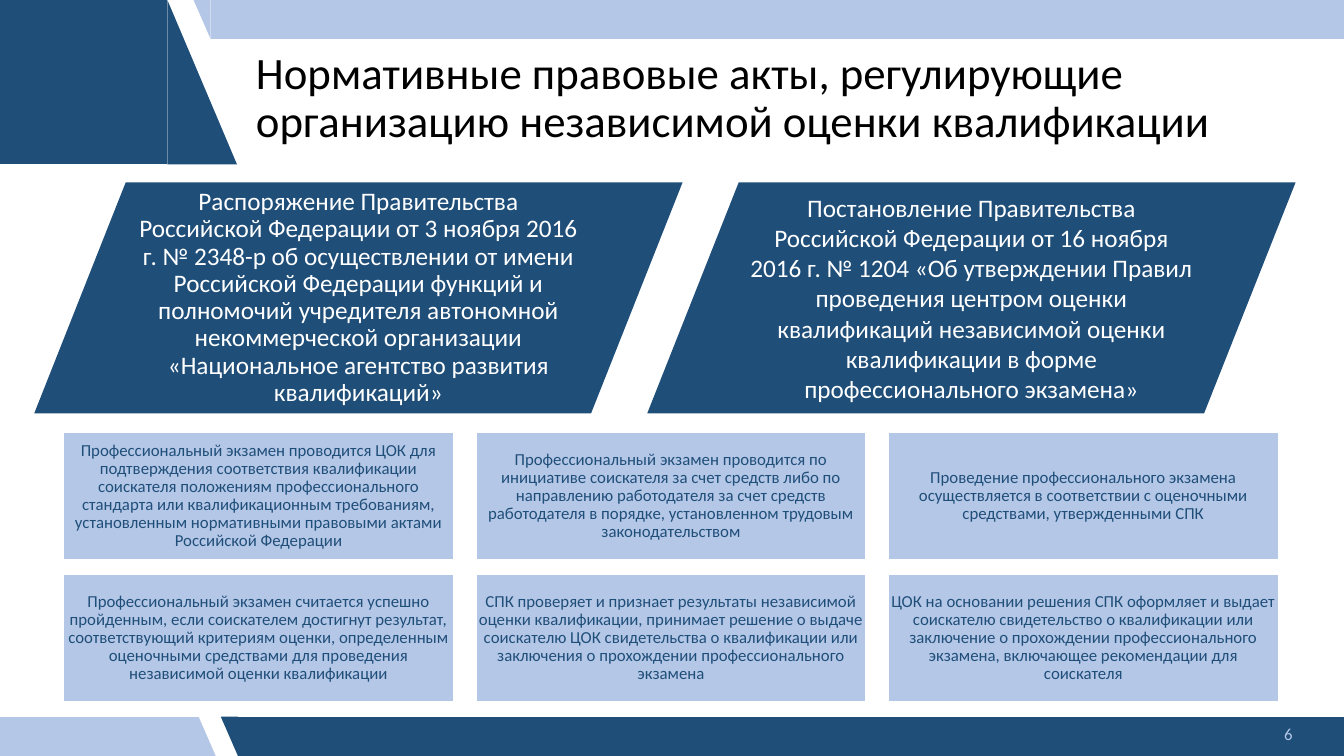
from dataclasses import dataclass
from itertools import product

from pptx import Presentation
from pptx.dml.color import RGBColor
from pptx.enum.shapes import MSO_SHAPE
from pptx.enum.text import MSO_ANCHOR, PP_ALIGN
from pptx.shapes.autoshape import Shape
from pptx.slide import Slide
from pptx.util import Inches, Pt


@dataclass(frozen=True)
class Theme:
    font: str = "Calibri"
    dark: RGBColor = RGBColor(0x1F, 0x4E, 0x79)
    light: RGBColor = RGBColor(0xB4, 0xC7, 0xE7)
    white: RGBColor = RGBColor(0xFF, 0xFF, 0xFF)
    black: RGBColor = RGBColor(0, 0, 0)
    title_size: int = 32
    act_size: int = 18
    card_size: int = 12


@dataclass(frozen=True)
class Box:
    left: float
    top: float
    width: float
    height: float

    def lengths(self) -> list[int]:
        return [Inches(value) for value in (self.left, self.top, self.width, self.height)]


@dataclass(frozen=True)
class Decoration:
    kind: MSO_SHAPE
    box: Box
    color: RGBColor
    rotation: int = 0


@dataclass(frozen=True)
class TextStyle:
    size: int
    color: RGBColor
    alignment: PP_ALIGN = PP_ALIGN.CENTER
    line_spacing: float = 1.0
    side_inset: float = 0.1
    edge_inset: float = 0.05


@dataclass(frozen=True)
class Act:
    text: str
    left: float
    line_spacing: float


THEME = Theme()
BAR, CORNER = MSO_SHAPE.FLOWCHART_PROCESS, MSO_SHAPE.RIGHT_TRIANGLE
BAR_HEIGHT, FOOTER_TOP = 0.39, 7.11

DECORATIONS = [
    Decoration(BAR, Box(2.36, FOOTER_TOP, 10.97, BAR_HEIGHT), THEME.dark),
    Decoration(CORNER, Box(2.19, FOOTER_TOP, 0.17, BAR_HEIGHT), THEME.dark, 180),
    Decoration(BAR, Box(0, FOOTER_TOP, 1.97, BAR_HEIGHT), THEME.light),
    Decoration(CORNER, Box(1.97, FOOTER_TOP, 0.17, BAR_HEIGHT), THEME.light),
    Decoration(BAR, Box(2.09, 0, 11.24, BAR_HEIGHT), THEME.light),
    Decoration(CORNER, Box(1.92, 0, 0.17, BAR_HEIGHT), THEME.light, 180),
    Decoration(BAR, Box(0, 0, 1.66, 1.63), THEME.dark),
    Decoration(CORNER, Box(1.66, 0, 0.69, 1.63), THEME.dark),
]

TITLE = "Нормативные правовые акты, регулирующие организацию независимой оценки квалификации"
ACTS = [
    Act(
        "Распоряжение Правительства Российской Федерации от 3 ноября 2016 г. № 2348-р "
        "об осуществлении от имени Российской Федерации функций и полномочий учредителя "
        "автономной некоммерческой организации «Национальное агентство развития квалификаций»",
        0.34, 0.9,
    ),
    Act(
        "Постановление Правительства Российской Федерации от 16 ноября 2016 г. № 1204 "
        "«Об утверждении Правил проведения центром оценки квалификаций независимой оценки "
        "квалификации в форме профессионального экзамена»",
        6.42, 1.0,
    ),
]
CARDS = [
    "Профессиональный экзамен проводится ЦОК для подтверждения соответствия квалификации "
    "соискателя положениям профессионального стандарта или квалификационным требованиям, "
    "установленным нормативными правовыми актами Российской Федерации",
    "Профессиональный экзамен проводится по инициативе соискателя за счет средств либо по "
    "направлению работодателя за счет средств работодателя в порядке, установленном трудовым "
    "законодательством",
    "Проведение профессионального экзамена осуществляется в соответствии с оценочными "
    "средствами, утвержденными СПК",
    "Профессиональный экзамен считается успешно пройденным, если соискателем достигнут "
    "результат, соответствующий критериям оценки, определенным оценочными средствами для "
    "проведения независимой оценки квалификации",
    "СПК проверяет и признает результаты независимой оценки квалификации, принимает решение о "
    "выдаче соискателю ЦОК свидетельства о квалификации или заключения о прохождении "
    "профессионального экзамена",
    "ЦОК на основании решения СПК оформляет и выдает соискателю свидетельство о квалификации "
    "или заключение о прохождении профессионального экзамена, включающее рекомендации для "
    "соискателя",
]
CARD_COLUMNS, CARD_ROWS = 3, 2
FIRST_CARD = Box(0.63, 4.29, 3.87, 1.26)
CARD_STEP_X, CARD_STEP_Y = 4.09, 1.41


def apply_format(target: object, values: dict[str, object]) -> None:
    for name, value in values.items():
        setattr(target, name, value)


def add_filled_shape(slide: Slide, kind: MSO_SHAPE, box: Box, color: RGBColor) -> Shape:
    shape = slide.shapes.add_shape(kind, *box.lengths())
    shape.shadow.inherit = False
    shape.fill.solid()
    shape.fill.fore_color.rgb = color
    shape.line.fill.background()
    return shape


def write_text(shape: Shape, text: str, style: TextStyle) -> None:
    frame = shape.text_frame
    side, edge = Inches(style.side_inset), Inches(style.edge_inset)
    apply_format(frame, {
        "word_wrap": True,
        "vertical_anchor": MSO_ANCHOR.MIDDLE,
        "margin_left": side,
        "margin_right": side,
        "margin_top": edge,
        "margin_bottom": edge,
    })
    paragraph = frame.paragraphs[0]
    apply_format(paragraph, {
        "text": text,
        "alignment": style.alignment,
        "line_spacing": style.line_spacing,
    })
    font = paragraph.runs[0].font
    apply_format(font, {"name": THEME.font, "size": Pt(style.size)})
    font.color.rgb = style.color


def add_label(slide: Slide, box: Box, text: str, style: TextStyle) -> None:
    write_text(slide.shapes.add_textbox(*box.lengths()), text, style)


def add_act(slide: Slide, act: Act) -> None:
    box = Box(act.left, 1.81, 6.43, 2.29)
    shape = add_filled_shape(slide, MSO_SHAPE.PARALLELOGRAM, box, THEME.dark)
    shape.adjustments[0] = 0.396
    write_text(shape, act.text, TextStyle(THEME.act_size, THEME.white, line_spacing=act.line_spacing))


def add_cards(slide: Slide) -> None:
    style = TextStyle(THEME.card_size, THEME.dark, line_spacing=0.9, side_inset=0.03, edge_inset=0.03)
    for (row, column), text in zip(product(range(CARD_ROWS), range(CARD_COLUMNS)), CARDS):
        box = Box(FIRST_CARD.left + column * CARD_STEP_X, FIRST_CARD.top + row * CARD_STEP_Y,
                  FIRST_CARD.width, FIRST_CARD.height)
        card = add_filled_shape(slide, MSO_SHAPE.RECTANGLE, box, THEME.light)
        card.line.color.rgb = THEME.white
        card.line.width = Pt(1)
        write_text(card, text, style)


def main() -> None:
    presentation = Presentation()
    apply_format(presentation, {"slide_width": Inches(13.33), "slide_height": Inches(7.5)})
    slide = presentation.slides.add_slide(presentation.slide_layouts[6])
    for decoration in DECORATIONS:
        shape = add_filled_shape(slide, decoration.kind, decoration.box, decoration.color)
        shape.rotation = decoration.rotation
    add_label(slide, Box(2.44, 0.5, 10.42, 0.97), TITLE,
              TextStyle(THEME.title_size, THEME.black, PP_ALIGN.LEFT, 0.9))
    for act in ACTS:
        add_act(slide, act)
    add_cards(slide)
    add_label(slide, Box(9.92, 7.08, 3, 0.4), "6",
              TextStyle(THEME.card_size, THEME.light, PP_ALIGN.RIGHT))
    presentation.save("out.pptx")


if __name__ == "__main__":
    main()
